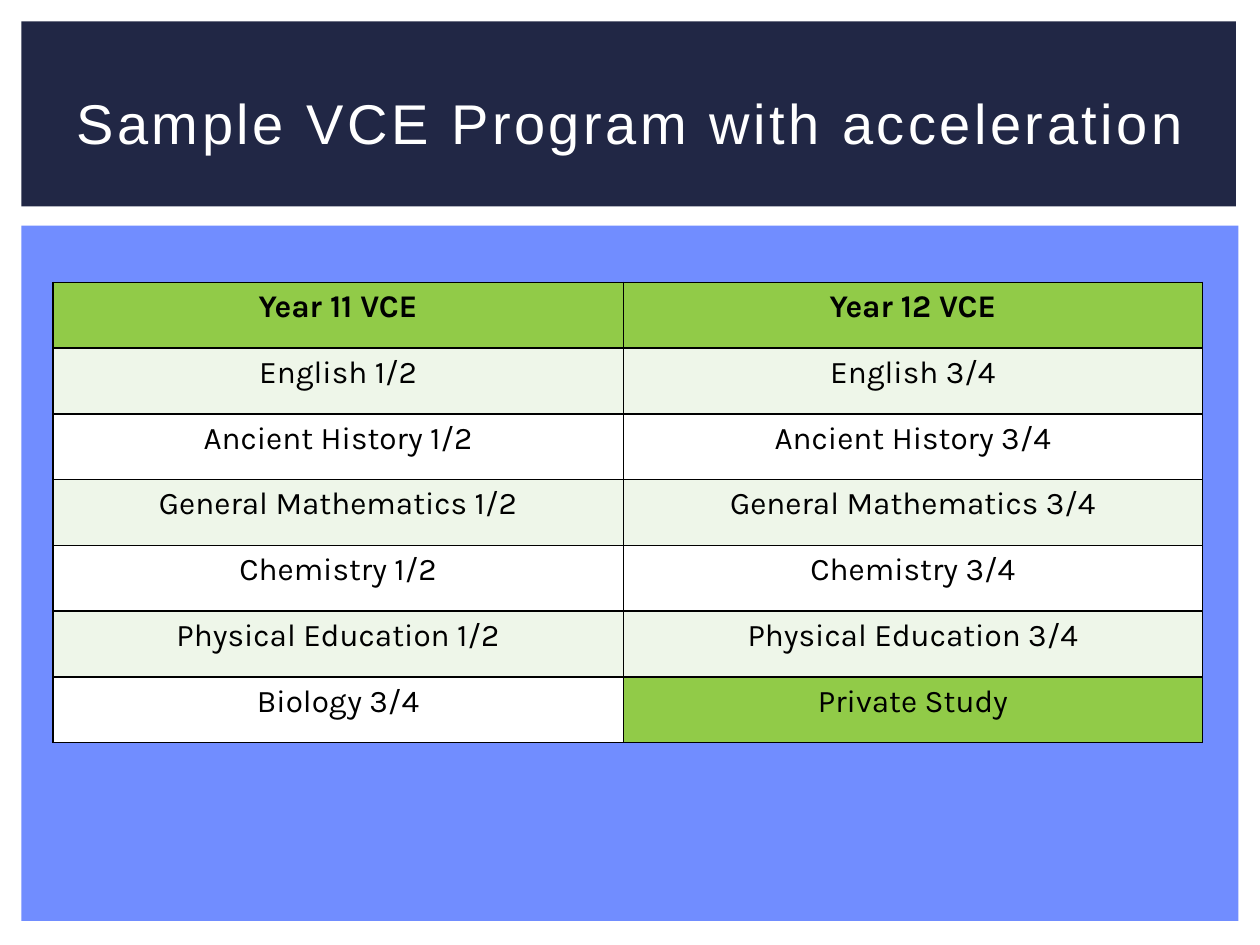
from lxml.etree import SubElement
from pptx import Presentation
from pptx.dml.color import RGBColor
from pptx.enum.shapes import MSO_SHAPE
from pptx.enum.text import MSO_ANCHOR, PP_ALIGN
from pptx.oxml.ns import qn
from pptx.util import Pt

TITLE = "Sample VCE Program with acceleration"
HEADINGS = ("Year 11 VCE", "Year 12 VCE")
SUBJECTS = [
    ("English 1/2", "English 3/4"),
    ("Ancient History 1/2", "Ancient History 3/4"),
    ("General Mathematics 1/2", "General Mathematics 3/4"),
    ("Chemistry 1/2", "Chemistry 3/4"),
    ("Physical Education 1/2", "Physical Education 3/4"),
    ("Biology 3/4", "Private Study"),
]
HIGHLIGHTED = {*HEADINGS, "Private Study"}

NAVY = RGBColor(0x21, 0x27, 0x45)
BLUE = RGBColor(0x71, 0x8D, 0xFF)
GREEN = RGBColor(0x91, 0xCB, 0x48)
PALE_GREEN = RGBColor(0xEE, 0xF6, 0xE9)
WHITE = RGBColor(0xFF, 0xFF, 0xFF)
BLACK = RGBColor(0, 0, 0)

PANELS = [
    ((12.2, 128.9, 695.5, 397.4), BLUE),
    ((12.2, 12.2, 694.1, 105.8), NAVY),
]
TITLE_BOX = (30.2, 28.1, 660.2, 82.8)
TABLE_LEFT, TABLE_TOP = 30.2, 161.3
COLUMN_WIDTHS = (326, 331)
ROW_HEIGHT = 37.6


def write_text(frame, text, *, font, size, color, bold=False, spacing=0):
    paragraph = frame.paragraphs[0]
    paragraph.alignment = PP_ALIGN.CENTER
    run = paragraph.add_run()
    run.text = text
    run.font.name = font
    run.font.size = Pt(size)
    run.font.color.rgb = color
    run.font.bold = bold
    if spacing:
        run.font._element.set("spc", str(spacing * 100))


def add_panel(slide, box, color):
    panel = slide.shapes.add_shape(MSO_SHAPE.RECTANGLE, *map(Pt, box))
    panel.shadow.inherit = False
    panel.fill.solid()
    panel.fill.fore_color.rgb = color
    panel.line.fill.background()


def set_borders(cell, color, width):
    properties = cell._tc.get_or_add_tcPr()
    for index, side in enumerate(("lnL", "lnR", "lnT", "lnB")):
        line = SubElement(properties, qn(f"a:{side}"), w=str(Pt(width)))
        fill = SubElement(line, qn("a:solidFill"))
        SubElement(fill, qn("a:srgbClr"), val=str(color))
        properties.insert(index, line)


def add_program_table(slide):
    rows = [HEADINGS, *SUBJECTS]
    table = slide.shapes.add_table(
        len(rows), len(COLUMN_WIDTHS), Pt(TABLE_LEFT), Pt(TABLE_TOP),
        Pt(sum(COLUMN_WIDTHS)), Pt(ROW_HEIGHT * len(rows))).table
    for column, width in zip(table.columns, COLUMN_WIDTHS):
        column.width = Pt(width)
    for row_index, labels in enumerate(rows):
        table.rows[row_index].height = Pt(ROW_HEIGHT)
        band = PALE_GREEN if row_index % 2 else WHITE
        for column_index, label in enumerate(labels):
            cell = table.cell(row_index, column_index)
            cell.fill.solid()
            cell.fill.fore_color.rgb = GREEN if label in HIGHLIGHTED else band
            set_borders(cell, BLACK, 1)
            write_text(cell.text_frame, label, font="Karla", size=18,
                       color=BLACK, bold=row_index == 0)


def add_title(slide):
    frame = slide.shapes.add_textbox(*map(Pt, TITLE_BOX)).text_frame
    frame.word_wrap = True
    frame.vertical_anchor = MSO_ANCHOR.MIDDLE
    write_text(frame, TITLE, font="Arial", size=32, color=WHITE, spacing=2)


def main():
    presentation = Presentation()
    presentation.slide_width, presentation.slide_height = Pt(720), Pt(540)
    slide = presentation.slides.add_slide(presentation.slide_layouts[6])
    for box, color in PANELS:
        add_panel(slide, box, color)
    add_program_table(slide)
    add_title(slide)
    presentation.save("out.pptx")


if __name__ == "__main__":
    main()
